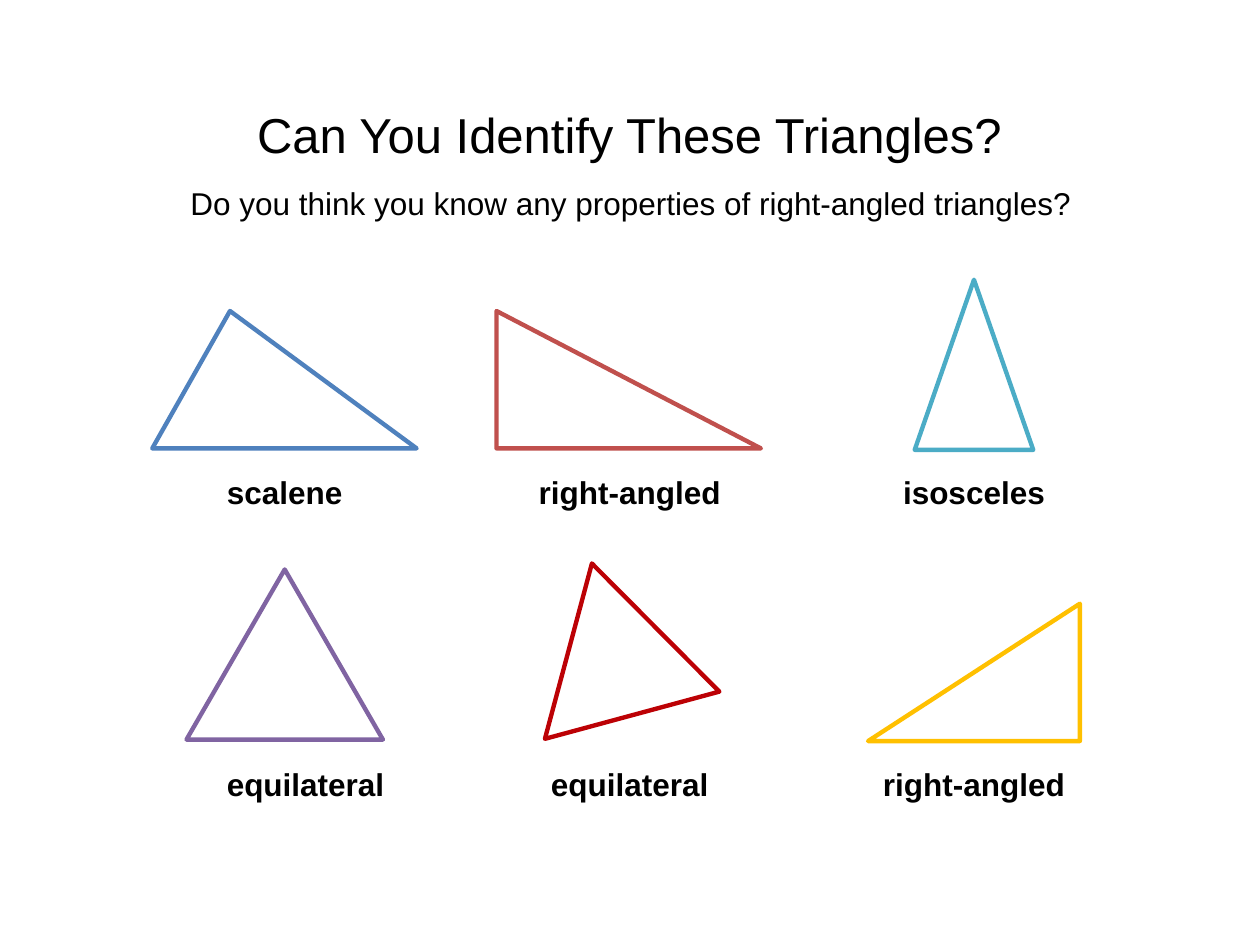
"""Build a slide of six labelled triangles to identify."""
from dataclasses import dataclass

from pptx import Presentation
from pptx.dml.color import RGBColor
from pptx.enum.shapes import MSO_SHAPE
from pptx.enum.text import MSO_ANCHOR, MSO_AUTO_SIZE, PP_ALIGN
from pptx.util import Cm, Pt

TRIANGLE = MSO_SHAPE.ISOSCELES_TRIANGLE
CENTER = PP_ALIGN.CENTER
TOP, MIDDLE = MSO_ANCHOR.TOP, MSO_ANCHOR.MIDDLE
FIT_SHAPE = MSO_AUTO_SIZE.SHAPE_TO_FIT_TEXT


@dataclass(frozen=True)
class Theme:
    font: str = "Arial"
    text: str = "000000"
    paper: str = "FFFFFF"
    blue: str = "4F81BD"
    red: str = "C0504D"
    teal: str = "4BACC6"
    purple: str = "8064A2"
    crimson: str = "BC0105"
    gold: str = "FFC000"
    title_size: int = 28
    body_size: int = 18
    outline: float = 2.5


THEME = Theme()
LINE_HEIGHT = 1.02
COLUMNS = (3.91, 10.36, 17.3)
LABEL_TOPS = (9.42, 15.29)

# Each row: label, label width, triangle box, apex position, rotation, colour
TRIANGLE_ROWS = (
    (
        ("scalene", 3.66, (3.07, 6.27, 5.33, 2.77), 0.294, 0, THEME.blue),
        ("right-angled", 4.67, (10.01, 6.27, 5.33, 2.77), 0, 0, THEME.red),
        ("isosceles", 4.67, (18.44, 5.64, 2.39, 3.43), 0.5, 0, THEME.teal),
    ),
    (
        ("equilateral", 4.5, (3.76, 11.48, 3.96, 3.43), 0.5, 0, THEME.purple),
        ("equilateral", 4.67, (11.15, 11.96, 3.66, 3.15), 0.5, 105, THEME.crimson),
        ("right-angled", 4.67, (17.5, 12.17, 4.27, 2.77), 1, 0, THEME.gold),
    ),
)


def add_text(slide, text, *, box, size=THEME.body_size, bold=False, anchor=TOP, auto_size=FIT_SHAPE):
    """Add a centred line of text in a box given in centimetres."""
    shape = slide.shapes.add_textbox(*map(Cm, box))
    frame = shape.text_frame
    frame.word_wrap = True
    frame.auto_size = auto_size
    frame.vertical_anchor = anchor
    paragraph = frame.paragraphs[0]
    paragraph.alignment = CENTER
    run = paragraph.add_run()
    run.text = text
    run.font.name = THEME.font
    run.font.size = Pt(size)
    run.font.bold = bold
    run.font.color.rgb = RGBColor.from_string(THEME.text)


def add_triangle(slide, box, apex, rotation, color):
    """Add an outlined triangle with its apex at a fraction of its width."""
    shape = slide.shapes.add_shape(TRIANGLE, *map(Cm, box))
    shape.adjustments[0] = apex
    shape.rotation = rotation
    shape.shadow.inherit = False
    shape.fill.solid()
    shape.fill.fore_color.rgb = RGBColor.from_string(THEME.paper)
    shape.line.color.rgb = RGBColor.from_string(color)
    shape.line.width = Pt(THEME.outline)


def main():
    """Build and save the slide."""
    presentation = Presentation()
    presentation.slide_width, presentation.slide_height = Cm(25.4), Cm(19.05)
    slide = presentation.slides.add_slide(presentation.slide_layouts[6])
    add_text(slide, "Can You Identify These Triangles?", box=(1.27, 1.32, 22.83, 2.77),
             size=THEME.title_size, anchor=MIDDLE, auto_size=MSO_AUTO_SIZE.NONE)
    add_text(slide, "Do you think you know any properties of right-angled triangles?",
             box=(2.11, 3.58, 21.21, LINE_HEIGHT))
    for label_top, row in zip(LABEL_TOPS, TRIANGLE_ROWS):
        for left, (label, width, box, apex, rotation, color) in zip(COLUMNS, row):
            add_triangle(slide, box, apex, rotation, color)
            add_text(slide, label, box=(left, label_top, width, LINE_HEIGHT), bold=True)
    presentation.save("out.pptx")


if __name__ == "__main__":
    main()
